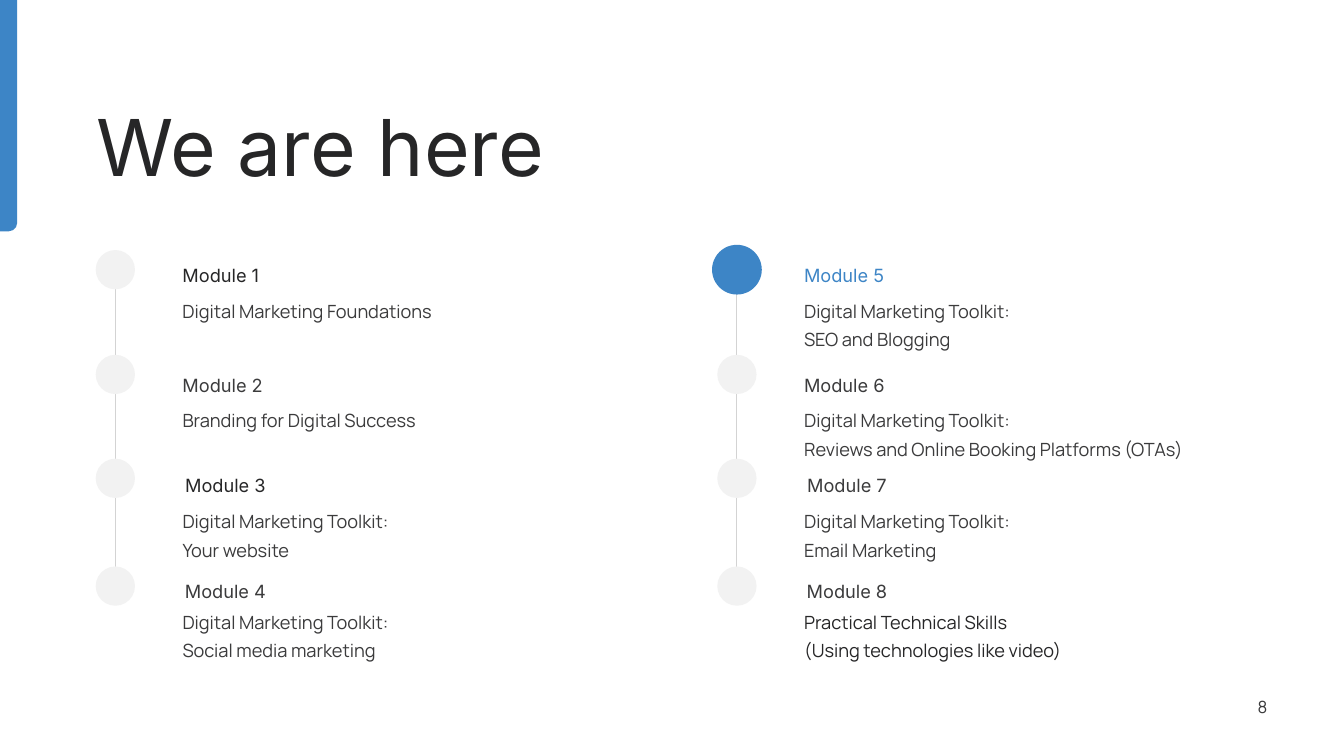
from pptx import Presentation, util as u
from pptx.dml.color import RGBColor
from pptx.enum import shapes, text
from pptx.oxml.ns import qn
from lxml import etree

BLUE, DARK, GREY = "3D85C6", "262627", "3B3B3C"
PALE, RULE = "F2F2F2", "D3D3D3"

presentation = Presentation()
presentation.slide_width, presentation.slide_height = u.Inches(13.33), u.Inches(7.5)
slide = presentation.slides.add_slide(presentation.slide_layouts[6])

# One hundredth of the slide's width and height
across = presentation.slide_width / 100
down = presentation.slide_height / 100


def paint(fill, colour):
    fill.solid()
    fill.fore_color.rgb = RGBColor.from_string(colour)


def add_text(words, left, top, width, height, size=13, font="Manrope", colour=GREY,
             align=text.PP_ALIGN.LEFT, anchor=text.MSO_ANCHOR.TOP, spacing=1.3, grow=True):
    box = slide.shapes.add_textbox(int(left * across), int(top * down),
                                   int(width * across), int(height * down))
    frame = box.text_frame
    frame.word_wrap = True
    frame.auto_size = text.MSO_AUTO_SIZE.SHAPE_TO_FIT_TEXT if grow else text.MSO_AUTO_SIZE.NONE
    frame.margin_left = frame.margin_right = frame.margin_top = frame.margin_bottom = 0
    frame.vertical_anchor = anchor
    paragraph = frame.paragraphs[0]
    paragraph.text = words
    paragraph.alignment, paragraph.line_spacing = align, spacing
    paragraph.font.size, paragraph.font.name = u.Pt(size), font
    paint(paragraph.font.fill, colour)


# Corner tab, rounded at its lower right
tab = slide.shapes.add_shape(shapes.MSO_SHAPE.ROUND_1_RECTANGLE, 0, 0,
                             int(1.28 * across), int(30.6 * down))
tab.adjustments[0] = 0.5
tab.rotation = 180
tab._element.spPr.find(qn("a:xfrm")).set("flipH", "1")
tab.shadow.inherit = False
paint(tab.fill, BLUE)
tab.line.fill.background()

# Title and page number
add_text("We are here", 7.2, 14.4, 87.17, 11.87, size=56, font="Inter", colour=DARK,
         spacing=0.9, grow=False)
add_text("8", 90.62, 90.8, 3.68, 5.33, size=12, align=text.PP_ALIGN.RIGHT,
         anchor=text.MSO_ANCHOR.MIDDLE, spacing=1, grow=False)

# Timeline grid: dot centres, heading tops and body tops per row
columns = [8.58, 54.83]
rows = [(35.67, 34.13, 38.8), (49.53, 48.67, 53.33), (63.27, 61.87, 66.67), (77.53, 75.87, 80)]
heading_formats = [(9.15, text.PP_ALIGN.LEFT), (7.65, text.PP_ALIGN.LEFT),
                   (6.38, text.PP_ALIGN.CENTER), (6.38, text.PP_ALIGN.CENTER)]
text_offset = 5
active_module = 5

# Heading colour, body, body width, body colour
modules = [
    (DARK, "Digital Marketing Foundations", 22.28, GREY),
    (GREY, "Branding for Digital Success", 30.76, GREY),
    (DARK, "Digital Marketing Toolkit: Your website", 17.18, GREY),
    (GREY, "Digital Marketing Toolkit:\vSocial media marketing", 17.18, GREY),
    (BLUE, "Digital Marketing Toolkit:\vSEO and Blogging", 22.28, GREY),
    (GREY, "Digital Marketing Toolkit:\vReviews and Online Booking Platforms (OTAs)", 30.76, GREY),
    (GREY, "Digital Marketing Toolkit: Email Marketing", 17.18, GREY),
    (GREY, "Practical Technical Skills\v(Using technologies like video)", 21.16, DARK),
]

# Rails behind the dots
for column in columns:
    rail = slide.shapes.add_connector(shapes.MSO_CONNECTOR.STRAIGHT,
                                      int(column * across), int(rows[0][0] * down),
                                      int(column * across), int(80 * down))
    paint(rail.line.fill, RULE)
    rail.line.width = u.Pt(0.75)
    etree.SubElement(rail._element.spPr, qn("a:effectLst"))

# Dots, headings and descriptions
for index, (heading_colour, body, body_width, body_colour) in enumerate(modules):
    column = columns[index // len(rows)]
    dot_middle, heading_top, body_top = rows[index % len(rows)]
    heading_width, heading_align = heading_formats[index % len(rows)]
    active = index + 1 == active_module
    diameter = (3.7 if active else 2.92) * across
    dot = slide.shapes.add_shape(shapes.MSO_SHAPE.OVAL,
                                 int(column * across - diameter / 2),
                                 int(dot_middle * down - diameter / 2),
                                 int(diameter), int(diameter))
    dot.shadow.inherit = False
    paint(dot.fill, BLUE if active else PALE)
    dot.line.fill.background()
    add_text(f"Module {index + 1}", column + text_offset, heading_top, heading_width, 2.93,
             font="Inter", colour=heading_colour, align=heading_align)
    add_text(body, column + text_offset, body_top, body_width,
             6.67 if "Toolkit" in body or "\v" in body else 2.93, colour=body_colour)

presentation.save("out.pptx")
